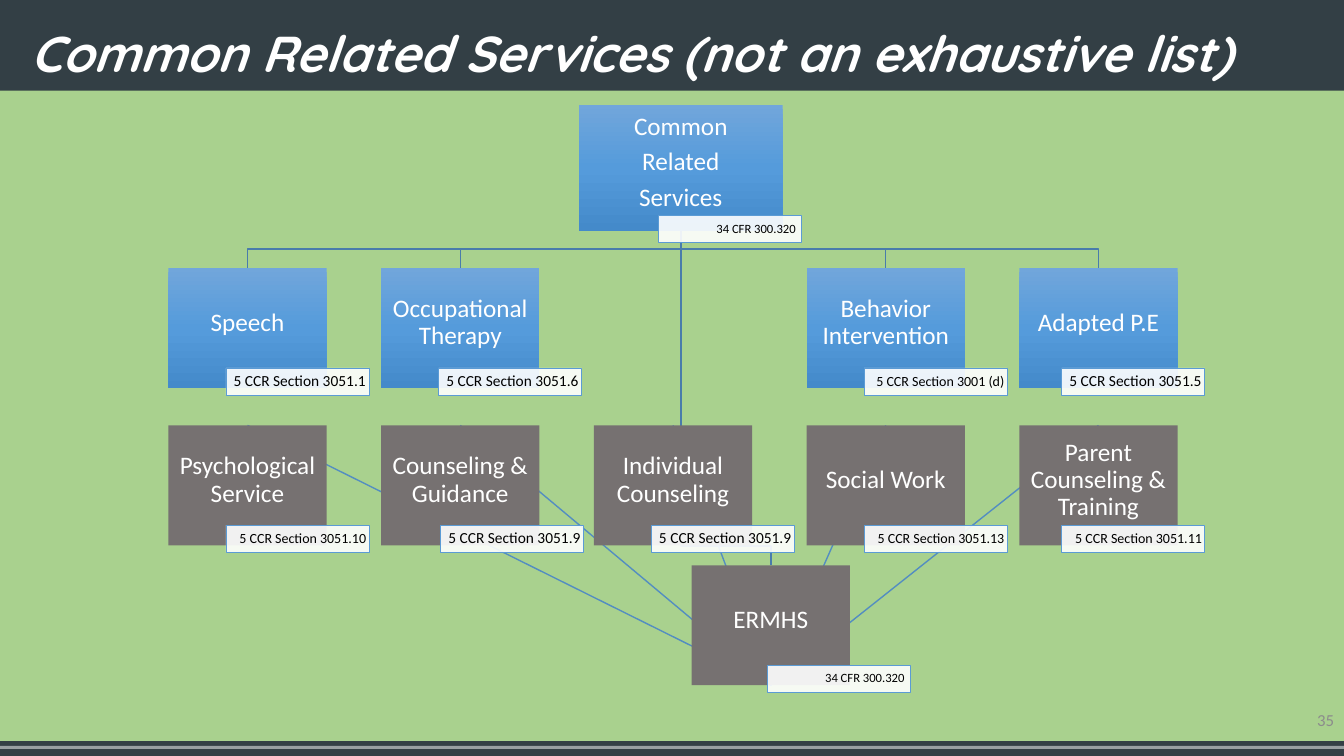
import copy
import pptx
import pptx.util
import pptx.dml.color
import pptx.enum.shapes
import pptx.enum.text
import pptx.oxml
import pptx.oxml.ns

Inches = pptx.util.Inches
Pt = pptx.util.Pt
Align = pptx.enum.text.PP_ALIGN
RECT = pptx.enum.shapes.MSO_SHAPE.RECTANGLE
qn = pptx.oxml.ns.qn

WIDE, HIGH = 13.33, 7.5
LEFT, TOP = 1.67, 2.66
STEP_X, STEP_Y = 2.11, 1.56
CARD_W, CARD_H = 1.57, 1.19
ROOT_W, ROOT_H = 2.02, 1.25
TAG_W, TAG_H = 1.42, 0.27
ROOT = (1.93, -1.04)
HUB = (2.46, 1.89)

COLORS = {
    "dark": "343F45", "title": "333F45", "green": "A9D18E", "white": "FFFFFF",
    "black": "000000", "gray": "767171", "number": "8C8C8C", "edge": "5B9BD5",
    "elbow": "497CAB", "ray": "538DC1",
    "light": "71A6DB", "mid": "559BDB", "deep": "448ACA",
}

TOP_ROW = [
    (0, "Speech", "5 CCR Section 3051.1", 11, 0.57),
    (1, "Occupational Therapy", "5 CCR Section 3051.6", 11, 0.57),
    (3, "Behavior Intervention", "5 CCR Section 3001 (d)", 10, 0.57),
    (4, "Adapted P.E", "5 CCR Section 3051.5", 11, 0.42),
]
LOW_ROW = [
    (0, "Psychological Service", "5 CCR Section 3051.10", 10, 0.57),
    (1, "Counseling & Guidance", "5 CCR Section 3051.9", 11, 0.59),
    (2, "Individual Counseling", "5 CCR Section 3051.9", 11, 0.57),
    (3, "Social Work", "5 CCR Section 3051.13", 10, 0.57),
    (4, "Parent Counseling & Training", "5 CCR Section 3051.11", 10, 0.42),
]


def rgb(name):
    return pptx.dml.color.RGBColor.from_string(COLORS[name])


def col(num):
    return LEFT + STEP_X * num


def row(num):
    return TOP + STEP_Y * num


def mid(num):
    return col(num) + CARD_W / 2


def put(item, values):
    for name, value in values.items():
        setattr(item, name, value)


def write(shape, text, size, color, align, pads, face="Calibri", **extra):
    frame = shape.text_frame
    frame.text = text
    names = ("margin_left", "margin_top", "margin_right", "margin_bottom")
    put(frame, dict(zip(names, map(Inches, pads))))
    put(frame, {"word_wrap": True,
                "auto_size": pptx.enum.text.MSO_AUTO_SIZE.NONE,
                "vertical_anchor": pptx.enum.text.MSO_ANCHOR.MIDDLE})
    for para in frame.paragraphs:
        put(para, {"alignment": align, "line_spacing": 0.9,
                   "space_before": Pt(0), "space_after": Pt(6)})
        for run in para.runs:
            put(run.font, {"name": face, "size": Pt(size), **extra})
            run.font.color.rgb = rgb(color)


def fade(shape, share):
    tint = shape._element.spPr.find(qn("a:solidFill"))[0]
    alpha = pptx.oxml.parse_xml(
        f'<a:alpha {pptx.oxml.ns.nsdecls("a")} val="{share * 1000}"/>')
    tint.append(alpha)


def rect(slide, x, y, w, h, color):
    shape = slide.shapes.add_shape(RECT, *map(Inches, (x, y, w, h)))
    shape.shadow.inherit = False
    shape.fill.solid()
    shape.fill.fore_color.rgb = rgb(color)
    shape.line.fill.background()
    return shape


def shade(shape):
    shape.fill.gradient()
    shape.fill.gradient_angle = 270
    stops = next(shape._element.spPr.iter(qn("a:gsLst")))
    stops.insert(1, copy.deepcopy(stops[0]))
    for stop, name, spot in zip(shape.fill.gradient_stops,
                                ("light", "mid", "deep"), (0, 0.5, 1)):
        stop.color.rgb = rgb(name)
        stop.position = spot


def card(slide, spot, text, tag, size, shift, blue,
         w=CARD_W, h=CARD_H, drop=0.99, gap=0.03):
    x, y = col(spot[0]), row(spot[1])
    box = rect(slide, x, y, w, h, "gray")
    if blue:
        shade(box)
    write(box, text, 18, "white", Align.CENTER, (0.01, 0.01, 0.01, 0.11))
    label = rect(slide, x + shift, y + drop, TAG_W, TAG_H, "white")
    fade(label, 90)
    label.line.color.rgb = rgb("edge")
    label.line.width = Pt(0.5)
    write(label, tag, size, "black", Align.RIGHT, (0.03, 0.01, gap, 0.01))


def elbow(slide, end_x, end_y):
    x = col(ROOT[0]) + ROOT_W / 2
    y = row(ROOT[1]) + ROOT_H
    bend = end_y - 0.19
    points = [(x, bend), (end_x, bend), (end_x, end_y)]
    path = slide.shapes.build_freeform(Inches(x), Inches(y))
    path.add_line_segments([tuple(map(Inches, p)) for p in points], close=False)
    shape = path.convert_to_shape()
    shape.shadow.inherit = False
    shape.fill.background()
    shape.line.color.rgb = rgb("elbow")
    shape.line.width = Pt(1)


def ray(slide, num):
    ends = (mid(HUB[0]), row(HUB[1]) + CARD_H, mid(num), row(1))
    line = slide.shapes.add_connector(
        pptx.enum.shapes.MSO_CONNECTOR.STRAIGHT, *map(Inches, ends))
    line.line.color.rgb = rgb("ray")
    line.line.width = Pt(1)
    line._element.spPr.append(pptx.oxml.parse_xml(
        f'<a:effectLst {pptx.oxml.ns.nsdecls("a")}/>'))


def head(slide):
    title = slide.shapes.title
    put(title, {"left": 0, "top": Inches(-0.14),
                "width": Inches(WIDE), "height": Inches(1.04)})
    title.fill.solid()
    title.fill.fore_color.rgb = rgb("title")
    write(title, "Common Related Services (not an exhaustive list)", 36, "white",
          Align.LEFT, (0.3, 0.4, 0.1, 0.05), "Quicksand", bold=True, italic=True)


def number(slide):
    box = slide.shapes.add_textbox(*map(Inches, (WIDE - 3, 6.95, 3, 0.4)))
    write(box, "35", 12, "number", Align.RIGHT, (0.1, 0.05, 0.1, 0.05))


def main():
    deck = pptx.Presentation()
    put(deck, {"slide_width": Inches(WIDE), "slide_height": Inches(HIGH)})
    slide = deck.slides.add_slide(deck.slide_layouts[5])
    slide.background.fill.solid()
    slide.background.fill.fore_color.rgb = rgb("dark")
    head(slide)
    fade(rect(slide, 0, 7.4, WIDE, 0.03, "white"), 50)
    rect(slide, 0, 0.9, WIDE, 6.45, "green")
    number(slide)
    for item in TOP_ROW:
        elbow(slide, mid(item[0]), row(0))
    elbow(slide, mid(HUB[0]), row(HUB[1]))
    for item in LOW_ROW:
        ray(slide, item[0])
    card(slide, ROOT, "Common\nRelated\nServices", "34 CFR 300.320", 9, 0.79,
         True, ROOT_W, ROOT_H, 1.1, 0.06)
    card(slide, HUB, "ERMHS", "34 CFR 300.320", 9, 0.75, False, gap=0.06)
    for level, items in enumerate((TOP_ROW, LOW_ROW)):
        for num, text, tag, size, shift in items:
            card(slide, (num, level), text, tag, size, shift, level == 0)
    deck.save("out.pptx")


if __name__ == "__main__":
    main()
